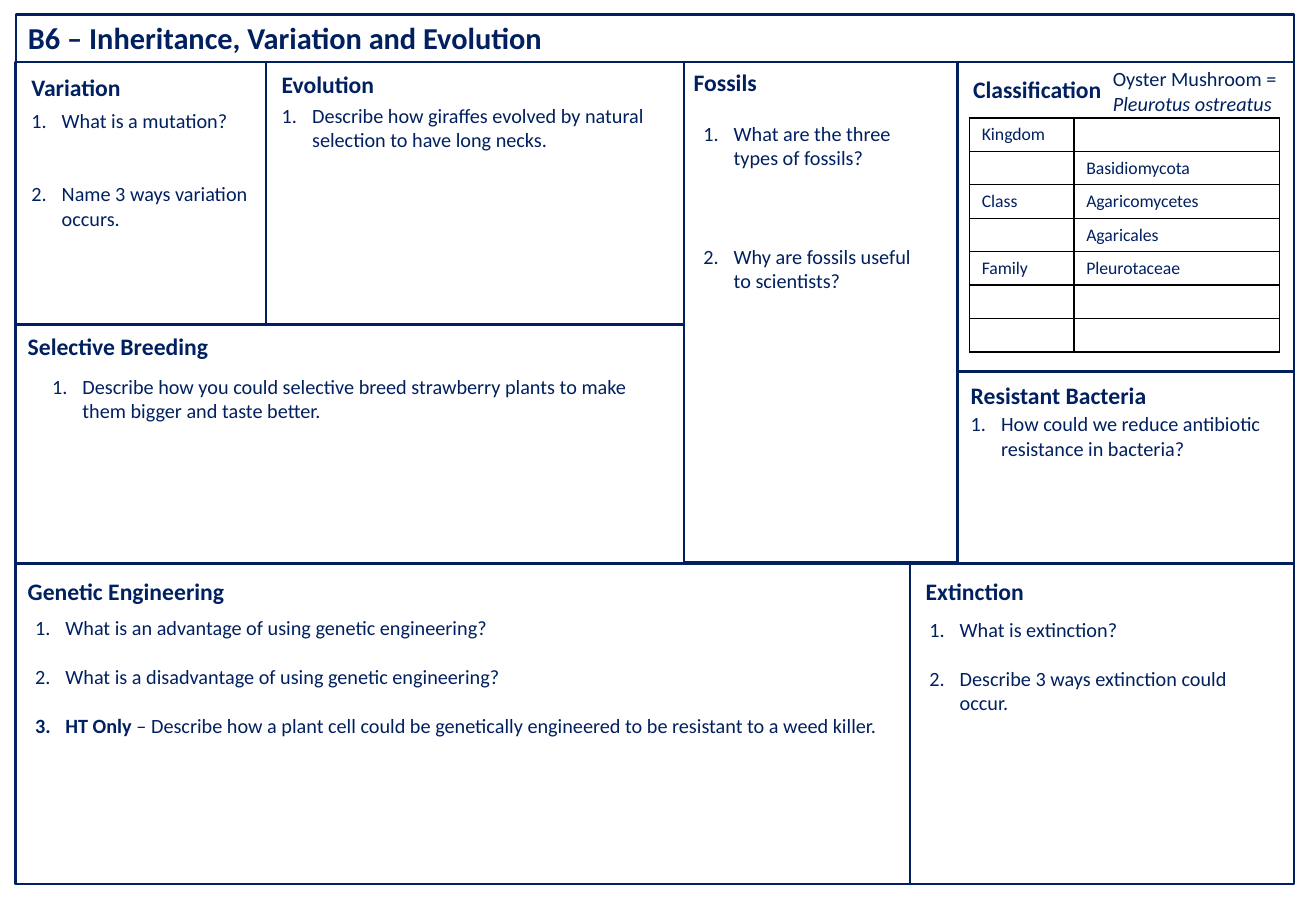
from dataclasses import dataclass

from lxml import etree
from pptx import Presentation
from pptx.dml.color import RGBColor
from pptx.enum.shapes import MSO_SHAPE
from pptx.enum.text import MSO_ANCHOR, MSO_AUTO_SIZE, PP_ALIGN
from pptx.oxml.ns import qn
from pptx.util import Inches, Pt

RECT = MSO_SHAPE.RECTANGLE
TOP, MIDDLE = MSO_ANCHOR.TOP, MSO_ANCHOR.MIDDLE
NO_FIT = MSO_AUTO_SIZE.NONE
LEFT = PP_ALIGN.LEFT


@dataclass(frozen=True)
class Theme:
    font: str = "Calibri"
    navy: RGBColor = RGBColor(0x00, 0x20, 0x60)
    grid: str = "000000"
    title: float = 18
    head: float = 14
    body: float = 12
    cell: float = 10.5
    line: float = 1.5
    rule: float = 1
    gap: float = 14.65  # one line of body text


THEME = Theme()

# Each panel: box, heading, heading offset, list offset and width, questions.
# A question is (blank lines before it, runs); a run is (text, bold).
PANELS = [
    ((0.13, 0.51, 2.06, 2.16), "Variation", (0.03, 0.04), (0.03, 0.33, 2.06), [
        (0, [("What is a mutation?", False)]),
        (2, [("Name 3 ways variation occurs.", False)])]),
    ((2.19, 0.51, 3.44, 2.16), "Evolution", (0.03, 0.02), (0.03, 0.29, 3.25), [
        (0, [("Describe how giraffes evolved by natural selection "
              "to have long necks.", False)])]),
    ((0.13, 2.67, 5.5, 1.97), "Selective Breeding", (0, 0.01), (0.2, 0.36, 5.28), [
        (0, [("Describe how you could selective breed strawberry plants "
              "to make them bigger and taste better.", False)])]),
    ((5.63, 0.51, 2.25, 4.12), "Fossils", (-0.02, 0), (0.06, 0.44, 2.04), [
        (0, [("What are the three types of fossils?", False)]),
        (3, [("Why are fossils useful to scientists?", False)])]),
    ((7.88, 3.06, 2.77, 1.58), "Resistant Bacteria", (0.01, 0.03), (0.01, 0.28, 2.61), [
        (0, [("How could we reduce antibiotic resistance in bacteria?", False)])]),
    ((0.13, 4.64, 7.36, 2.64), "Genetic Engineering", (0, 0.06), (0.06, 0.38, 7.27), [
        (0, [("What is an advantage of using genetic engineering?", False)]),
        (1, [("What is a disadvantage of using genetic engineering?", False)]),
        (1, [("HT Only ", True),
             ("– Describe how a plant cell could be genetically engineered "
              "to be resistant to a weed killer.", False)])]),
    ((7.49, 4.64, 3.16, 2.64), "Extinction", (0.03, 0.06), (0.06, 0.39, 2.86), [
        (0, [("What is extinction?", False)]),
        (1, [("Describe 3 ways extinction could occur.", False)])]),
]

RANKS = [("Kingdom", ""), ("", "Basidiomycota"), ("Class", "Agaricomycetes"),
         ("", "Agaricales"), ("Family", "Pleurotaceae"), ("", ""), ("", "")]


def add_run(para, text, size, bold=False, italic=False):
    run = para.add_run()
    run.text = text
    font = run.font
    font.name, font.size = THEME.font, Pt(size)
    font.bold, font.italic = bold, italic
    font.color.rgb = THEME.navy


def add_frame(slide, x, y, w, h):
    box = slide.shapes.add_textbox(Inches(x), Inches(y), Inches(w), Inches(h))
    box.text_frame.word_wrap = True
    return box.text_frame


def add_head(slide, x, y, text):
    frame = add_frame(slide, x, y, 2, 0.34)
    add_run(frame.paragraphs[0], text, THEME.head, bold=True)


def add_edge(slide, box):
    edge = slide.shapes.add_shape(RECT, *map(Inches, box))
    edge.shadow.inherit = False
    edge.fill.background()
    edge.line.color.rgb = THEME.navy
    edge.line.width = Pt(THEME.line)


def add_list(slide, x, y, w, items):
    frame = add_frame(slide, x, y, w, 0.5)
    for i, (blank, runs) in enumerate(items):
        para = frame.add_paragraph() if i else frame.paragraphs[0]
        para.space_before = Pt(blank * THEME.gap)
        props = para._p.get_or_add_pPr()
        props.set("marL", str(Inches(0.25)))
        props.set("indent", str(-Inches(0.25)))
        etree.SubElement(props, qn("a:buFont"), typeface="+mj-lt")
        etree.SubElement(props, qn("a:buAutoNum"), type="arabicPeriod")
        for text, bold in runs:
            add_run(para, text, THEME.body, bold)


def add_title(slide, box):
    x, y, w, h = box
    add_edge(slide, box)
    title = slide.shapes.title
    title.left, title.top = Inches(x), Inches(y - 0.01)
    title.width, title.height = Inches(w), Inches(h)
    frame = title.text_frame
    frame.vertical_anchor, frame.auto_size = TOP, NO_FIT
    para = frame.paragraphs[0]
    para.alignment = LEFT
    add_run(para, "B6 – Inheritance, Variation and Evolution", THEME.title, bold=True)


def add_panel(slide, box, head, shift, place, items):
    x, y = box[:2]
    add_edge(slide, box)
    add_head(slide, x + shift[0], y + shift[1], head)
    add_list(slide, x + place[0], y + place[1], place[2], items)


def fill_cell(cell, text):
    cell.margin_top = cell.margin_bottom = Inches(0.03)
    cell.vertical_anchor = MIDDLE
    para = cell.text_frame.paragraphs[0]
    if text:
        add_run(para, text, THEME.cell)
    else:
        para._p.get_or_add_endParaRPr().set("sz", str(int(THEME.cell * 100)))
    props = cell._tc.get_or_add_tcPr()
    for side in ("lnL", "lnR", "lnT", "lnB"):
        line = etree.SubElement(props, qn(f"a:{side}"), w=str(Pt(THEME.rule)))
        solid = etree.SubElement(line, qn("a:solidFill"))
        etree.SubElement(solid, qn("a:srgbClr"), val=THEME.grid)
    cell.fill.background()


def add_ranks(slide, box):
    x, y, w, h = box
    add_edge(slide, box)
    add_head(slide, x + 0.03, y + 0.06, "Classification")

    # Species name
    para = add_frame(slide, x + 1.18, y - 0.01, 1.58, 0.5).paragraphs[0]
    add_run(para, "Oyster Mushroom = ", THEME.body)
    add_run(para, "Pleurotus ostreatus", THEME.body, italic=True)

    # Table of ranks
    high = Inches(1.93)
    table = slide.shapes.add_table(len(RANKS), 2, Inches(x + 0.1), Inches(y + 0.46),
                                   Inches(2.55), high).table
    table.first_row = table.horz_banding = False
    for col, wide in zip(table.columns, (0.86, 1.69)):
        col.width = Inches(wide)
    for r, pair in enumerate(RANKS):
        table.rows[r].height = high // len(RANKS)
        for c, text in enumerate(pair):
            fill_cell(table.cell(r, c), text)


def main():
    deck = Presentation()
    deck.slide_width, deck.slide_height = Inches(10.83), Inches(7.5)
    slide = deck.slides.add_slide(deck.slide_layouts[5])
    add_title(slide, (0.13, 0.12, 10.52, 0.39))
    for panel in PANELS:
        add_panel(slide, *panel)
    add_ranks(slide, (7.88, 0.51, 2.77, 2.55))
    deck.save("out.pptx")


if __name__ == "__main__":
    main()
